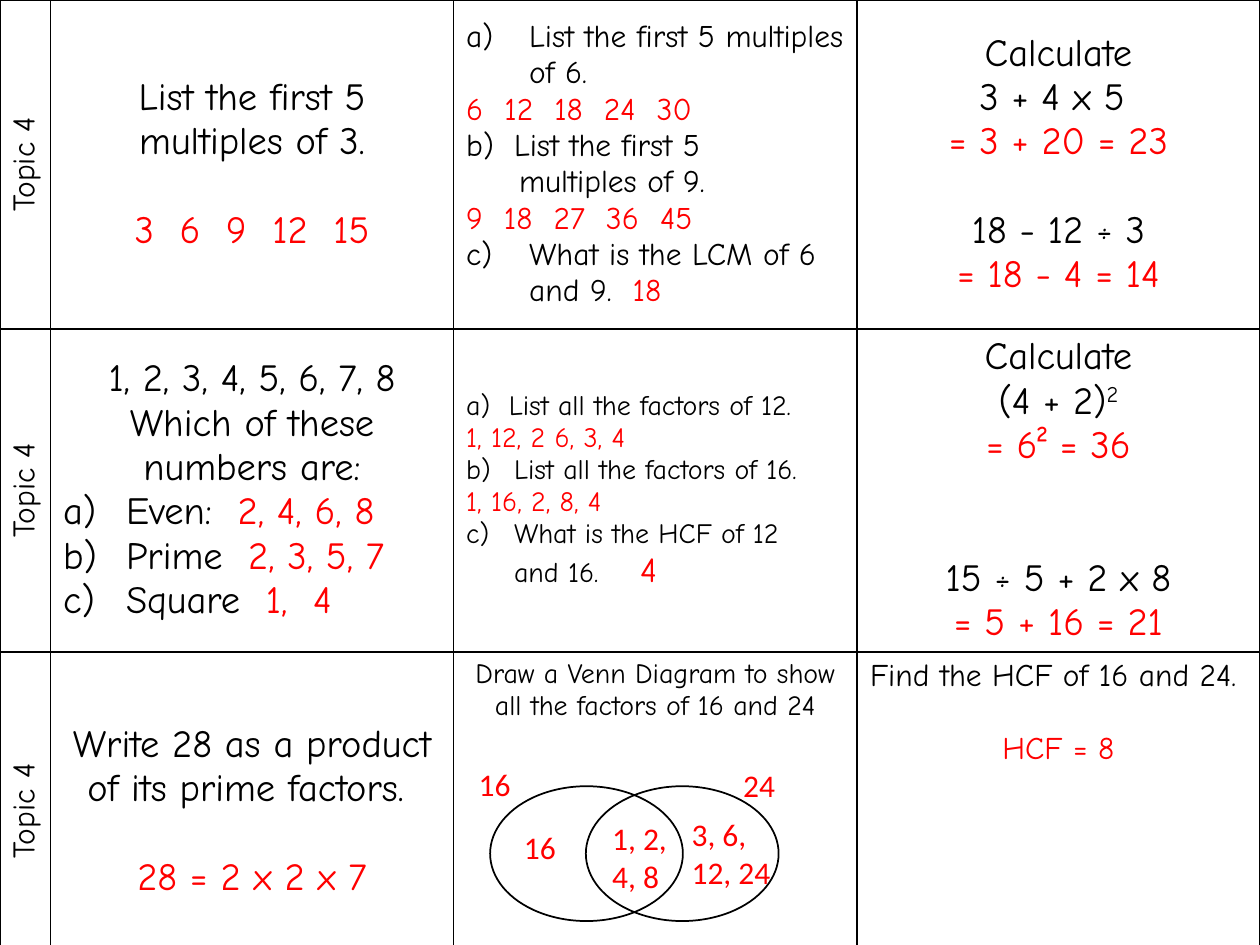
from dataclasses import dataclass

from lxml.etree import SubElement
from pptx import Presentation
from pptx.dml.color import RGBColor
from pptx.enum.shapes import MSO_SHAPE
from pptx.enum.text import MSO_ANCHOR, MSO_AUTO_SIZE, PP_ALIGN
from pptx.oxml.ns import qn
from pptx.util import Inches, Pt

WIDTH, HEIGHT = Inches(10), Inches(7.5)
COLORS = {"question": "000000", "answer": "FF0000", "line": "000000"}
HAND_FONT, PLAIN_FONT = "Comic Neue", "Calibri"
LINE_PITCH = 1.15

# Percentages of the slide's width and height
COLUMNS = [4, 32, 32, 32]
ROWS = [34.8, 34.13, 33.73]


@dataclass
class Line:
    question: str = ""
    answer: str = ""
    power: str = ""
    centered: bool = True
    gap: int = 0  # line heights left free above
    indent: float = 0  # inches
    number: int = 0  # start of lettering: 1 is a), 2 is b)
    tab: float = 0  # inches, tab stop before the answer
    answer_size: int = 0


def left(question="", answer="", **options):
    return Line(question, answer, centered=False, **options)


def item(question, answer="", number=1, indent=0.5):
    return left(question, answer, number=number, indent=indent)


# Each cell: text size, anchor, lines
MIDDLE, TOP = MSO_ANCHOR.MIDDLE, MSO_ANCHOR.TOP
CELLS = [
    [
        (22, MIDDLE, [
            Line("List the first 5 multiples of 3."),
            Line(answer="3  6  9  12  15", gap=1),
        ]),
        (18, MIDDLE, [
            item("List the first 5 multiples of 6."),
            left(answer="6  12  18  24  30"),
            item("List the first 5", number=2, indent=0.38),
            left("multiples of 9.", indent=0.42),
            left(answer="9  18  27  36  45"),
            item("What is the LCM of 6 and 9.  ", "18", number=3),
        ]),
        (22, MIDDLE, [
            Line("Calculate"),
            Line("3 + 4 x 5 "),
            Line(answer="= 3 + 20 = 23"),
            Line("18 - 12 ÷ 3", gap=1),
            Line(answer="= 18 - 4 = 14"),
        ]),
    ],
    [
        (22, MIDDLE, [
            Line("1, 2, 3, 4, 5, 6, 7, 8"),
            Line("Which of these numbers are:"),
            item("Even:  ", "2, 4, 6, 8"),
            item("Prime  ", "2, 3, 5, 7"),
            item("Square  ", "1,  4"),
        ]),
        (16, MIDDLE, [
            left("a)  List all the factors of 12."),
            left(answer="1, 12, 2 6, 3, 4"),
            item("List all the factors of 16.", number=2, indent=0.38),
            left(answer="1, 16, 2, 8, 4"),
            item("What is the HCF of 12", number=3, indent=0.38),
            left("and 16.\t", "4", indent=0.38, tab=1.56, answer_size=20),
        ]),
        (22, MIDDLE, [
            Line("Calculate"),
            Line("(4 + 2)", power="2"),
            Line(answer="= 6² = 36"),
            Line("15 ÷ 5 + 2 x 8", gap=2),
            Line(answer="= 5 + 16 = 21"),
        ]),
    ],
    [
        (22, MIDDLE, [
            Line("Write 28 as a product of its prime factors. "),
            Line(answer="28 = 2 x 2 x 7", gap=1),
        ]),
        (16, TOP, [Line("Draw a Venn Diagram to show all the factors of 16 and 24")]),
        (18, TOP, [
            Line("Find the HCF of 16 and 24. "),
            Line(answer="HCF = 8", gap=1),
        ]),
    ],
]

# Left, top, width, height in percent of the slide
VENN_SETS = [(38.9, 83.2, 15.3, 14.27), (46.5, 83.2, 15.3, 14.27)]
VENN_LABELS = [
    ("16", (37, 80.27, 5.8, 5.33)),
    ("24", (58, 80.4, 5, 5.33)),
    ("16", (40.6, 86.93, 5.1, 5.33)),
    ("1, 2, 4, 8", (47.6, 86, 7.5, 9.47)),
    ("3, 6,\n12, 24", (53.9, 85.6, 8.8, 9.47)),
]


def color(name):
    return RGBColor.from_string(COLORS[name])


def across(percent):
    return int(WIDTH * percent / 100)


def down(percent):
    return int(HEIGHT * percent / 100)


def area(x, y, width, height):
    return across(x), down(y), across(width), down(height)


def format_font(font, name, size, color_name):
    font.name, font.size = name, Pt(size)
    font.color.rgb = color(color_name)


def add_span(para, text, size, color_name):
    span = para.add_run()
    span.text = text
    format_font(span.font, HAND_FONT, size, color_name)
    return span


def set_indent(para, line):
    """Set the left margin, lettering and tab stop of a paragraph."""
    properties = para._p.get_or_add_pPr()
    margin = Inches(line.indent)
    properties.set("marL", str(margin))
    properties.set("indent", str(-margin if line.number else 0))
    if line.number:
        lettering = SubElement(properties, qn("a:buAutoNum"), type="alphaLcParenR")
        if line.number > 1:
            lettering.set("startAt", str(line.number))
    if line.tab:
        stops = SubElement(properties, qn("a:tabLst"))
        SubElement(stops, qn("a:tab"), pos=str(Inches(line.tab)), algn="l")


def write_line(para, line, size):
    para.alignment = PP_ALIGN.CENTER if line.centered else PP_ALIGN.LEFT
    if line.gap:
        para.space_before = Pt(round(line.gap * size * LINE_PITCH, 1))
    set_indent(para, line)
    if line.question:
        add_span(para, line.question, size, "question")
    if line.power:
        power = add_span(para, line.power, size, "question")
        power.font._element.set("baseline", "30000")
    if line.answer:
        add_span(para, line.answer, line.answer_size or size, "answer")


def fill_cell(cell, size, anchor, lines):
    cell.vertical_anchor = anchor
    frame = cell.text_frame
    for index, line in enumerate(lines):
        para = frame.add_paragraph() if index else frame.paragraphs[0]
        write_line(para, line, size)


def style_cell(cell):
    properties = cell._tc.get_or_add_tcPr()
    for side in ("a:lnL", "a:lnR", "a:lnT", "a:lnB"):
        border = SubElement(properties, qn(side), w=str(Pt(1)))
        fill = SubElement(border, qn("a:solidFill"))
        SubElement(fill, qn("a:srgbClr"), val=COLORS["line"])
    cell.fill.background()


def add_questions(page):
    frame = page.shapes.add_table(
        len(ROWS), len(COLUMNS), *area(0, 0, sum(COLUMNS), sum(ROWS)))
    table = frame.table
    table.first_row = table.horz_banding = False
    for column, share in zip(table.columns, COLUMNS):
        column.width = across(share)
    for row, share, contents in zip(table.rows, ROWS, CELLS):
        row.height = down(share)
        topic, *questions = row.cells
        fill_cell(topic, 18, TOP, [Line("Topic 4")])
        topic._tc.get_or_add_tcPr().set("vert", "vert270")
        for cell, content in zip(questions, contents):
            fill_cell(cell, *content)
    for cell in table.iter_cells():
        style_cell(cell)


def add_venn_set(page, place):
    oval = page.shapes.add_shape(MSO_SHAPE.OVAL, *area(*place))
    oval.shadow.inherit = False
    oval.fill.background()
    oval.line.color.rgb = color("line")
    oval.line.width = Pt(1)


def add_label(page, text, place):
    frame = page.shapes.add_textbox(*area(*place)).text_frame
    frame.word_wrap = True
    frame.auto_size = MSO_AUTO_SIZE.SHAPE_TO_FIT_TEXT
    frame.text = text
    for para in frame.paragraphs:
        format_font(para.runs[0].font, PLAIN_FONT, 18, "answer")


def main():
    deck = Presentation()
    deck.slide_width, deck.slide_height = WIDTH, HEIGHT
    page = deck.slides.add_slide(deck.slide_layouts[6])
    add_questions(page)
    for place in VENN_SETS:
        add_venn_set(page, place)
    for text, place in VENN_LABELS:
        add_label(page, text, place)
    deck.save("out.pptx")


if __name__ == "__main__":
    main()
